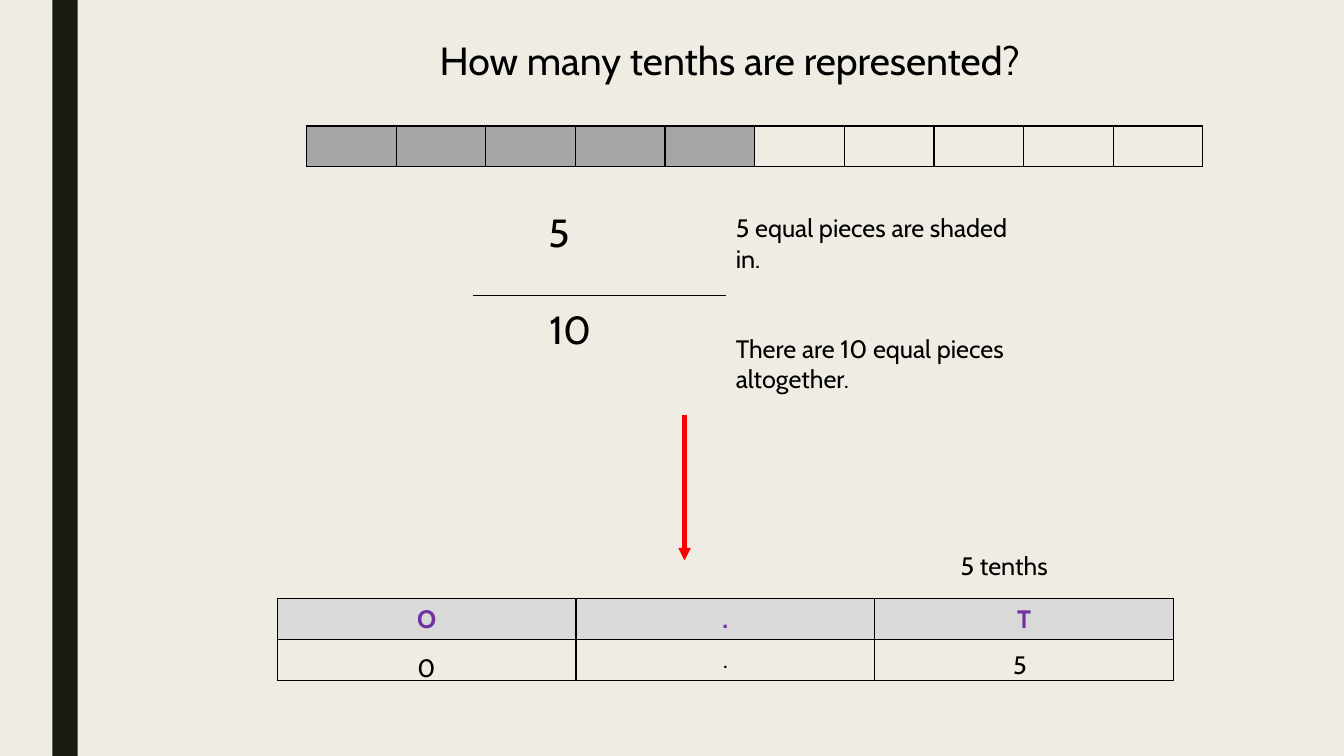
from lxml.etree import SubElement
from pptx import Presentation
from pptx.dml.color import RGBColor
from pptx.enum.shapes import MSO_CONNECTOR, MSO_SHAPE
from pptx.enum.text import MSO_ANCHOR, MSO_AUTO_SIZE, PP_ALIGN
from pptx.oxml import parse_xml
from pptx.oxml.ns import nsdecls, qn
from pptx.util import Inches, Pt

FONT = "Cabin"
BLACK, PURPLE, RED = "000000", "7030A0", "FF0000"
SHADED, HEADER = "A6A6A6", "D9D9D9"
ROW_HEIGHT = 0.405
TABLE_WIDTH = 8.89


def color(value):
    return RGBColor.from_string(value)


def add_run(paragraph, text, size, fill=BLACK, bold=False):
    run = paragraph.add_run()
    run.text = text
    run.font.name = FONT
    run.font.size = Pt(size)
    run.font.bold = bold
    run.font.color.rgb = color(fill)


def add_text(slide, text, left, top, width, height, size=18):
    box = slide.shapes.add_textbox(
        Inches(left), Inches(top), Inches(width), Inches(height))
    box.text_frame.word_wrap = True
    add_run(box.text_frame.paragraphs[0], text, size)


def add_line(slide, start, end, line_color, weight, arrow=False):
    line = slide.shapes.add_connector(
        MSO_CONNECTOR.STRAIGHT, *(Inches(value) for value in start + end))
    line.line.color.rgb = color(line_color)
    line.line.width = Pt(weight)
    if arrow:
        SubElement(line.line._get_or_add_ln(), qn("a:tailEnd"), type="triangle")
    SubElement(line._element.spPr, qn("a:effectLst"))


def format_cell(cell, fill=None):
    if fill:
        cell.fill.solid()
        cell.fill.fore_color.rgb = color(fill)
    else:
        cell.fill.background()
    properties = cell._tc.get_or_add_tcPr()
    for index, side in enumerate("LRTB"):
        properties.insert(index, parse_xml(
            f'<a:ln{side} {nsdecls("a")} w="{Pt(1)}"><a:solidFill>'
            f'<a:srgbClr val="{BLACK}"/></a:solidFill></a:ln{side}>'))


def add_grid(slide, left, top, rows, columns):
    table = slide.shapes.add_table(
        rows, columns, Inches(left), Inches(top),
        Inches(TABLE_WIDTH), Inches(rows * ROW_HEIGHT)).table
    table.first_row = False
    table.horz_banding = False
    return table


def add_background(slide):
    slide.background.fill.solid()
    slide.background.fill.fore_color.rgb = color("EFEDE3")
    band = slide.shapes.add_shape(
        MSO_SHAPE.RECTANGLE, Inches(0.52), 0, Inches(0.25), Inches(7.5))
    band.shadow.inherit = False
    band.fill.solid()
    band.fill.fore_color.rgb = color("191B0E")
    band.line.fill.background()


def add_title(slide, text, left, top, width, height):
    title = slide.shapes.title
    title.left, title.top = Inches(left), Inches(top)
    title.width, title.height = Inches(width), Inches(height)
    frame = title.text_frame
    frame.auto_size = MSO_AUTO_SIZE.NONE
    frame.vertical_anchor = MSO_ANCHOR.TOP
    frame.paragraphs[0].alignment = PP_ALIGN.LEFT
    add_run(frame.paragraphs[0], text, 28)


def add_tenths_bar(slide, left, top, shaded):
    table = add_grid(slide, left, top, 1, 10)
    for index, cell in enumerate(table.iter_cells()):
        format_cell(cell, SHADED if index < shaded else None)


def add_fraction(slide, left, top):
    # Numerator, fraction bar and denominator
    add_text(slide, "5", left + 0.65, top, 0.58, 0.57, 28)
    add_line(slide, (left, top + 0.91), (left + 2.51, top + 0.91), BLACK, 0.5)
    add_text(slide, "10", left + 0.66, top + 0.96, 0.87, 0.57, 28)
    # Explanations beside each number
    add_text(slide, "5 equal pieces are shaded in.",
             left + 2.51, top + 0.04, 3.16, 0.71)
    add_text(slide, "There are 10 equal pieces altogether.",
             left + 2.51, top + 1.24, 3.16, 0.71)


def add_place_value(slide, left, top):
    table = add_grid(slide, left, top, 2, 3)
    for column, heading in enumerate("O.T"):
        cell = table.cell(0, column)
        format_cell(cell, HEADER)
        cell.vertical_anchor = MSO_ANCHOR.MIDDLE
        paragraph = cell.text_frame.paragraphs[0]
        paragraph.alignment = PP_ALIGN.CENTER
        add_run(paragraph, heading, 18, PURPLE, True)
        format_cell(table.cell(1, column))
    point = table.cell(1, 1).text_frame.paragraphs[0]
    point.alignment = PP_ALIGN.CENTER
    add_run(point, ".", 18)
    # Answer label and digits
    add_text(slide, "5 tenths", left + 6.68, top - 0.53, 1.6, 0.4)
    add_text(slide, "0", left + 1.29, top + 0.48, 1.32, 0.4)
    add_text(slide, "5", left + 7.2, top + 0.45, 1.32, 0.4)


def main():
    presentation = Presentation()
    presentation.slide_width = Inches(13.33)
    presentation.slide_height = Inches(7.5)
    slide = presentation.slides.add_slide(presentation.slide_layouts[5])
    add_background(slide)
    add_title(slide, "How many tenths are represented?", 4.26, 0.31, 6.1, 0.57)
    add_tenths_bar(slide, 3.04, 1.25, 5)
    add_fraction(slide, 4.69, 2.02)
    add_line(slide, (6.79, 4.12), (6.79, 5.56), RED, 3, arrow=True)
    add_place_value(slide, 2.75, 5.94)
    presentation.save("out.pptx")


if __name__ == "__main__":
    main()
